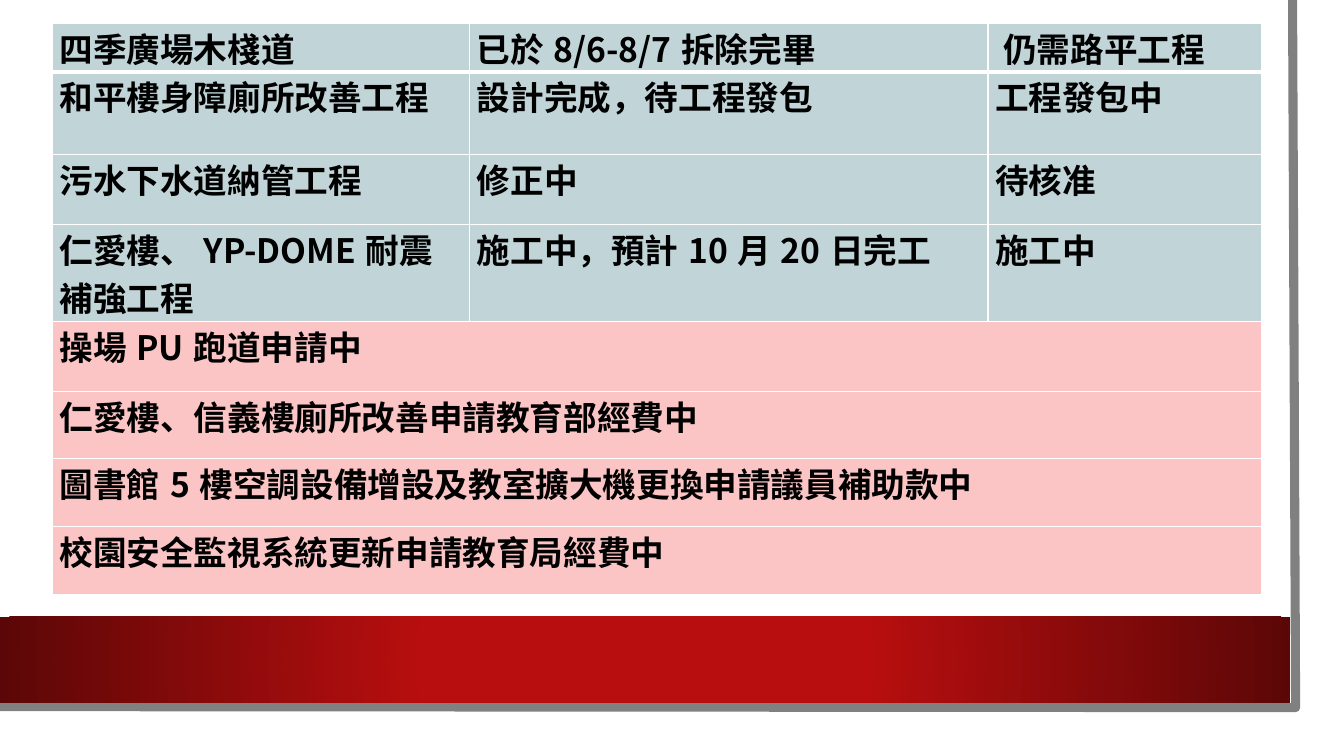
import pptx
import pptx.dml.color
import pptx.enum.shapes
import pptx.oxml
import pptx.oxml.ns
import pptx.util
from lxml import etree

Inches = pptx.util.Inches
Pt = pptx.util.Pt
DRAWING = pptx.oxml.ns.nsdecls("a")
FONT = "Noto Sans CJK SC"


def color(value):
    return pptx.dml.color.RGBColor.from_string(value)


deck = pptx.Presentation()
deck.slide_width = Inches(13.33)
deck.slide_height = Inches(7.5)
page = deck.slides.add_slide(deck.slide_layouts[6])

# Grey edge along the right and bottom of the sheet
builder = page.shapes.build_freeform(Inches(12.82), 0)
builder.add_line_segments(
    [(Inches(12.85), Inches(7.02)), (Inches(-0.03), Inches(7.01))], close=False)
edge = builder.convert_to_shape()
edge.shadow.inherit = False
edge.fill.background()
edge.line.color.rgb = color("808080")
edge.line.width = Pt(6.5)

# Red band with a radial gradient
band = page.shapes.add_shape(
    pptx.enum.shapes.MSO_SHAPE.RECTANGLE, 0, Inches(6.12), Inches(12.8), Inches(0.85))
band.shadow.inherit = False
band.line.fill.background()
band.fill.gradient()
gradient = band.element.spPr.find(pptx.oxml.ns.qn("a:gradFill"))
gradient.getparent().replace(gradient, pptx.oxml.parse_xml(
    f'<a:gradFill {DRAWING} rotWithShape="1"><a:gsLst>'
    '<a:gs pos="34000"><a:srgbClr val="B80E0F"/></a:gs>'
    '<a:gs pos="100000"><a:srgbClr val="5C0707"/></a:gs></a:gsLst>'
    '<a:path path="circle"><a:fillToRect l="50000" t="50000" r="50000" b="50000"/>'
    '</a:path></a:gradFill>'))

# Progress of the works; rows with one text span the whole table
works = [
    ("四季廣場木棧道", "已於8/6-8/7拆除完畢", "仍需路平工程"),
    ("和平樓身障廁所改善工程", "設計完成，待工程發包", "工程發包中"),
    ("污水下水道納管工程", "修正中", "待核准"),
    ("仁愛樓、YP-DOME耐震補強工程", "施工中，預計10月20日完工", "施工中"),
    ("操場PU跑道申請中",),
    ("仁愛樓、信義樓廁所改善申請教育部經費中",),
    ("圖書館5樓空調設備增設及教室擴大機更換申請議員補助款中",),
    ("校園安全監視系統更新申請教育局經費中",),
]
column_widths = [4.14, 5.14, 2.71]
row_heights = [0.47, 0.82, 0.69, 0.93, 0.69, 0.67, 0.67, 0.68]

table = page.shapes.add_table(
    len(works), len(column_widths), Inches(0.52), Inches(0.23),
    Inches(11.99), Inches(5.62)).table
for column, width in zip(table.columns, column_widths):
    column.width = Inches(width)
for row, height in zip(table.rows, row_heights):
    row.height = Inches(height)

for r, texts in enumerate(works):
    spans_table = len(texts) == 1
    if spans_table:
        table.cell(r, 0).merge(table.cell(r, 2))
    for c in range(len(column_widths)):
        cell = table.cell(r, c)
        cell.margin_left = cell.margin_right = Inches(0.07)
        cell.margin_top = cell.margin_bottom = 0
        cell.fill.solid()
        cell.fill.fore_color.rgb = color("FBC5C5" if spans_table else "C1D5D9")
        for i, side in enumerate("LRTB"):
            heavy = (r, side) in [(0, "B"), (1, "T")]
            border = pptx.oxml.parse_xml(
                f'<a:ln{side} {DRAWING} w="{Pt(3 if heavy else 1)}"><a:solidFill>'
                f'<a:srgbClr val="FFFFFF"/></a:solidFill></a:ln{side}>')
            cell._tc.tcPr.insert(i, border)
        if c < len(texts):
            para = cell.text_frame.paragraphs[0]
            para.text = texts[c]
            para.font.size = Pt(24)
            para.font.bold = True
            para.font.name = FONT
            para.font.color.rgb = color("000000")
            settings = para._p.pPr.find(pptx.oxml.ns.qn("a:defRPr"))
            etree.SubElement(settings, pptx.oxml.ns.qn("a:ea"), typeface=FONT)
table.cell(0, 2).margin_left = Inches(0.15)

deck.save("out.pptx")
